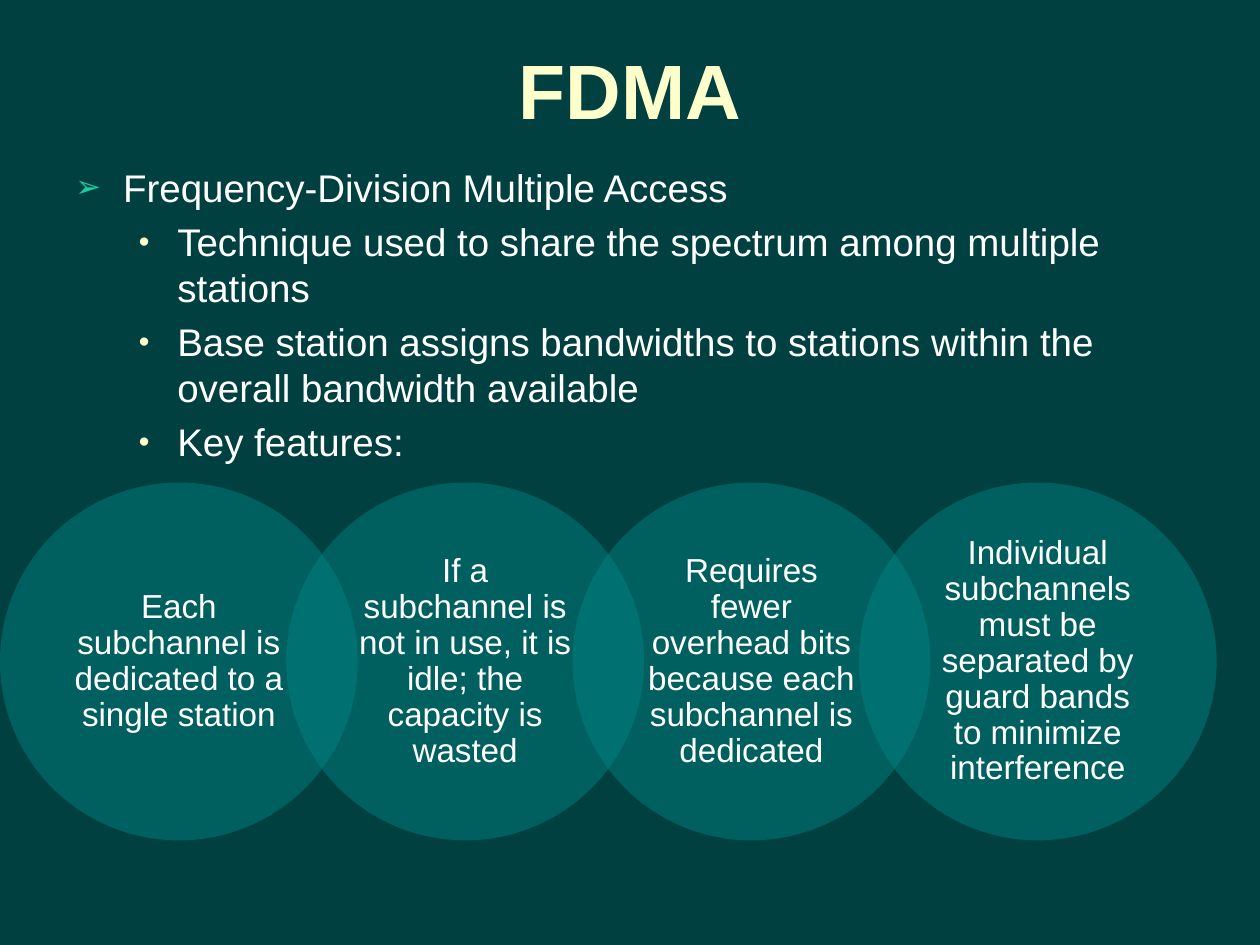
import pptx
import pptx.util
import pptx.dml.color
import pptx.enum.shapes
import pptx.enum.text
import pptx.oxml.ns
import lxml.etree

PX = 9144  # EMU per px, 100 px to the inch
FONT = "Arial"
BACKGROUND, TITLE, WHITE = "004040", "FFFFCC", "FFFFFF"
CIRCLE, ARROW = "008080", "1ACE9F"

# level, text
POINTS = [
    (0, "Frequency-Division Multiple Access"),
    (1, "Technique used to share the spectrum among multiple stations"),
    (1, "Base station assigns bandwidths to stations within the overall bandwidth available"),
    (1, "Key features:"),
]
# left margin, hanging indent, bullet, bullet colour, bullet size in percent
LEVELS = [
    (38, 38, "➢", ARROW, 80),
    (81, 31, "●", TITLE, 50),
]
FEATURES = [
    "Each subchannel is dedicated to a single station",
    "If a subchannel is not in use, it is idle; the capacity is wasted",
    "Requires fewer overhead bits because each subchannel is dedicated",
    "Individual subchannels must be separated by guard bands to minimize interference",
]


def px(length):
    return pptx.util.Emu(round(length * PX))


def color(value):
    return pptx.dml.color.RGBColor.from_string(value)


def add_child(parent, tag, **attributes):
    return lxml.etree.SubElement(parent, pptx.oxml.ns.qn(tag), attributes)


def add_span(para, text, size, fill, bold=False):
    span = para.add_run()
    span.text = text
    span.font.name = FONT
    span.font.size = pptx.util.Pt(size)
    span.font.bold = bold
    span.font.color.rgb = color(fill)


def add_text_box(page, left, top, width, height):
    box = page.shapes.add_textbox(px(left), px(top), px(width), px(height))
    box.text_frame.word_wrap = True
    return box.text_frame


def set_bullet(para, level):
    margin, hanging, mark, fill, percent = LEVELS[level]
    para.level = level
    properties = para._p.get_or_add_pPr()
    properties.set("marL", str(px(margin)))
    properties.set("indent", str(px(-hanging)))
    bullet_color = add_child(properties, "a:buClr")
    add_child(bullet_color, "a:srgbClr", val=fill)
    add_child(properties, "a:buSzPct", val=str(percent * 1000))
    add_child(properties, "a:buFont", typeface=FONT)
    add_child(properties, "a:buChar", char=mark)


def add_title(page, left, top, width, height):
    frame = add_text_box(page, left, top, width, height)
    frame.vertical_anchor = pptx.enum.text.MSO_ANCHOR.MIDDLE
    para = frame.paragraphs[0]
    para.alignment = pptx.enum.text.PP_ALIGN.CENTER
    add_span(para, "FDMA", 44, TITLE, bold=True)


def add_points(page, left, top, width, height):
    frame = add_text_box(page, left, top, width, height)
    for index, (level, text) in enumerate(POINTS):
        para = frame.add_paragraph() if index else frame.paragraphs[0]
        para.space_before = pptx.util.Pt(4.4)
        set_bullet(para, level)
        add_span(para, text, 22, WHITE)


def add_circle(page, left, top, diameter, text):
    circle = page.shapes.add_shape(
        pptx.enum.shapes.MSO_SHAPE.OVAL, px(left), px(top), px(diameter), px(diameter))
    circle.shadow.inherit = False
    circle.line.fill.background()
    circle.fill.solid()
    circle.fill.fore_color.rgb = color(CIRCLE)
    fill = circle._element.spPr.find(".//" + pptx.oxml.ns.qn("a:srgbClr"))
    add_child(fill, "a:alpha", val="50000")

    frame = circle.text_frame
    frame.word_wrap = True
    frame.vertical_anchor = pptx.enum.text.MSO_ANCHOR.MIDDLE
    frame.margin_left = frame.margin_right = px(16)
    frame.margin_top = frame.margin_bottom = px(3)
    para = frame.paragraphs[0]
    para.alignment = pptx.enum.text.PP_ALIGN.CENTER
    para.line_spacing = 0.9
    add_span(para, text, 19, WHITE)


def add_features(page, left, top, diameter):
    step = 0.8 * diameter  # neighbours overlap by a fifth
    for index, text in enumerate(FEATURES):
        add_circle(page, left + index * step, top, diameter, text)


def main():
    deck = pptx.Presentation()
    deck.slide_width, deck.slide_height = px(1000), px(750)
    page = deck.slides.add_slide(deck.slide_layouts[6])
    page.background.fill.solid()
    page.background.fill.fore_color.rgb = color(BACKGROUND)

    add_title(page, 50, 8, 900, 125)
    add_points(page, 50, 125, 900, 300)
    add_features(page, 0, 383, 284)
    deck.save("out.pptx")


if __name__ == "__main__":
    main()
